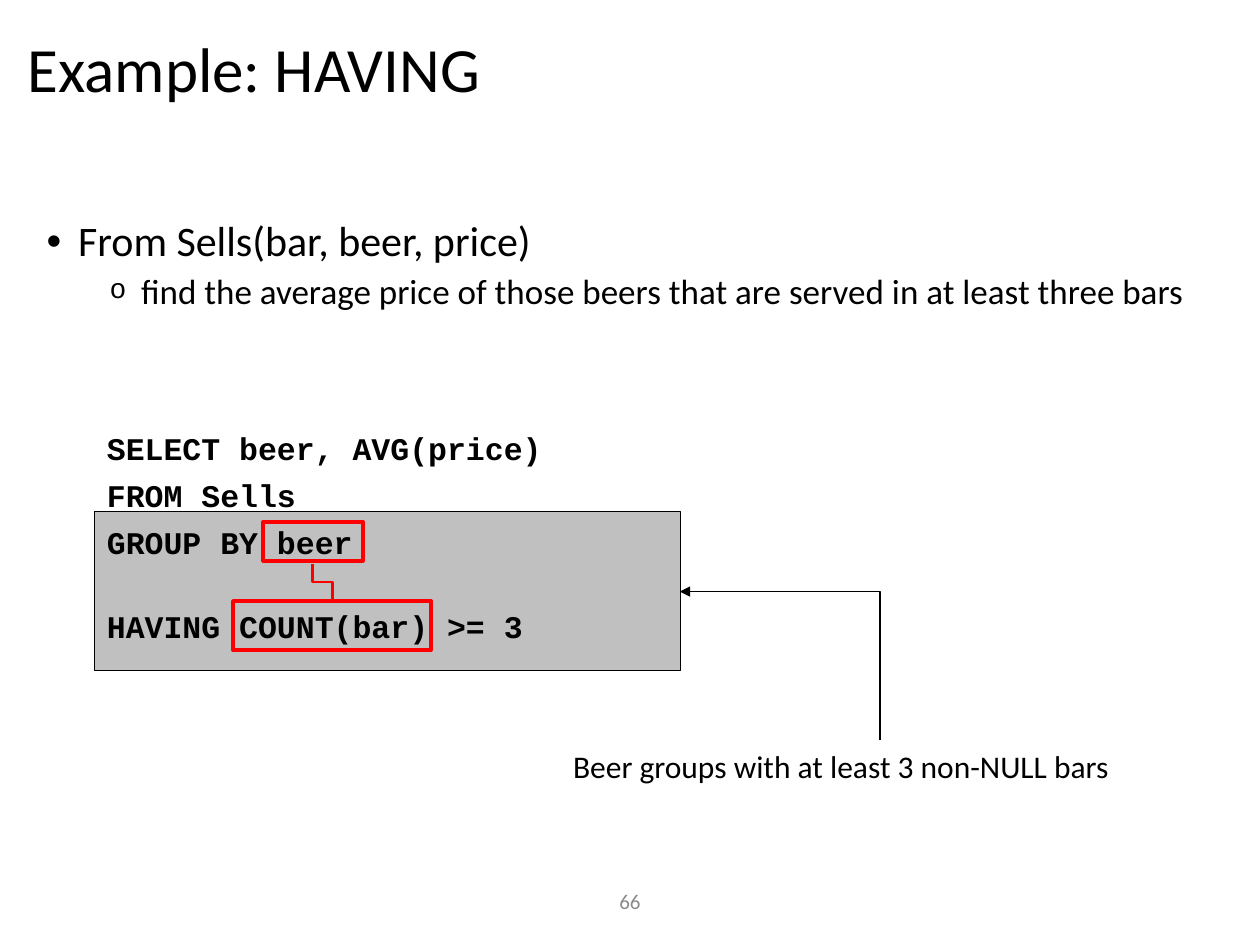
from lxml import etree
from pptx import Presentation
from pptx.dml.color import RGBColor
from pptx.enum import shapes, text
from pptx.oxml import ns
from pptx.util import Pt

COLORS = {"ink": "000000", "panel": "C0C0C0", "mark": "FF0000", "number": "8C8C8C"}


def write(paragraph, words, size, font="Calibri", color="ink", bold=False):
    run = paragraph.add_run()
    run.text = words
    run.font.size = Pt(size)
    run.font.name = font
    run.font.bold = bold
    run.font.color.rgb = RGBColor.from_string(COLORS[color])


def place(item, left, top, width, height):
    item.left, item.top, item.width, item.height = map(Pt, (left, top, width, height))
    item.text_frame.word_wrap = True
    item.text_frame.auto_size = text.MSO_AUTO_SIZE.NONE
    return item.text_frame


deck = Presentation()
deck.slide_width, deck.slide_height = Pt(720), Pt(540)
slide = deck.slides.add_slide(deck.slide_layouts[1])

heading = place(slide.shapes.title, 8.64, 5.76, 702.72, 71.28)
heading.vertical_anchor = text.MSO_ANCHOR.MIDDLE
heading.paragraphs[0].alignment = text.PP_ALIGN.LEFT
heading.paragraphs[0].line_spacing = 0.9
write(heading.paragraphs[0], "Example: HAVING", 36)

task = place(slide.placeholders[1], 19.44, 122.4, 680.4, 96.48)
task_lines = [
    ("From Sells(bar, beer, price)", 24, 10, 18, "•", "Arial", 100),
    ("find the average price of those beers that are served in at least three bars",
     20, 5, 54, "o", "Courier New", 80),
]
for level, (words, size, before, margin, bullet, bullet_font, percent) in enumerate(task_lines):
    line = task.add_paragraph() if level else task.paragraphs[0]
    line.level = level
    line.line_spacing = 0.9
    line.space_before = Pt(before)
    write(line, words, size)
    props = line._p.get_or_add_pPr()
    props.set("marL", str(Pt(margin)))
    props.set("indent", str(-Pt(18)))
    for tag, key, value in (("a:buSzPct", "val", str(percent * 1000)),
                            ("a:buFont", "typeface", bullet_font),
                            ("a:buChar", "char", bullet)):
        etree.SubElement(props, ns.qn(tag)).set(key, value)

boxes = [
    (54, 292.32, 334.8, 90.72, "panel", "ink", 0.75),
    (150.48, 298.08, 56.88, 22.32, None, "mark", 2.25),
    (133.2, 343.44, 113.04, 28.08, None, "mark", 2.25),
]
for left, top, width, height, fill, outline, weight in boxes:
    box = slide.shapes.add_shape(shapes.MSO_SHAPE.RECTANGLE,
                                 Pt(left), Pt(top), Pt(width), Pt(height))
    box.shadow.inherit = False
    if fill:
        box.fill.solid()
        box.fill.fore_color.rgb = RGBColor.from_string(COLORS[fill])
    else:
        box.fill.background()
    box.line.color.rgb = RGBColor.from_string(COLORS[outline])
    box.line.width = Pt(weight)

query = place(slide.shapes.add_textbox(0, 0, 0, 0), 54, 241.92, 311.76, 131.76)
clauses = ["SELECT beer, AVG(price)", "FROM Sells", "GROUP BY beer", "HAVING COUNT(bar) >= 3"]
for index, clause in enumerate(clauses):
    line = query.add_paragraph() if index else query.paragraphs[0]
    line.space_before = Pt(5)
    write(line, clause, 18, "Courier New", bold=True)
    if clause.startswith("GROUP"):
        line.add_line_break()
        line._p[-1].append(etree.Element(ns.qn("a:rPr"), sz="1800", b="1"))
        etree.SubElement(line._p[-1][0], ns.qn("a:latin")).set("typeface", "Courier New")

note = place(slide.shapes.add_textbox(0, 0, 0, 0), 320.4, 423.36, 365.76, 28.8)
write(note.paragraphs[0], "Beer groups with at least 3 non-NULL bars", 18)

page = place(slide.shapes.add_textbox(0, 0, 0, 0), 238.32, 500.4, 243.36, 28.8)
page.vertical_anchor = text.MSO_ANCHOR.MIDDLE
page.paragraphs[0].alignment = text.PP_ALIGN.CENTER
write(page.paragraphs[0], "66", 12, color="number")

links = [
    (403.2, 323.28, 84.96, 114.48, 90, "bentConnector2", "ink", 0.75, True),
    (174.24, 326.88, 20.16, 11.52, 270, "bentConnector3", "mark", 1.5, False),
]
for left, top, width, height, turn, preset, color, weight, arrow in links:
    link = slide.shapes.add_connector(shapes.MSO_CONNECTOR.ELBOW, Pt(left + width), Pt(top),
                                      Pt(left), Pt(top + height))
    link.line.color.rgb = RGBColor.from_string(COLORS[color])
    link.line.width = Pt(weight)
    props = link._element.spPr
    props.find(ns.qn("a:xfrm")).set("rot", str(turn * 60000))
    props.find(ns.qn("a:prstGeom")).set("prst", preset)
    if arrow:
        etree.SubElement(link.line._get_or_add_ln(), ns.qn("a:tailEnd")).set("type", "triangle")
    etree.SubElement(props, ns.qn("a:effectLst"))

deck.save("out.pptx")
